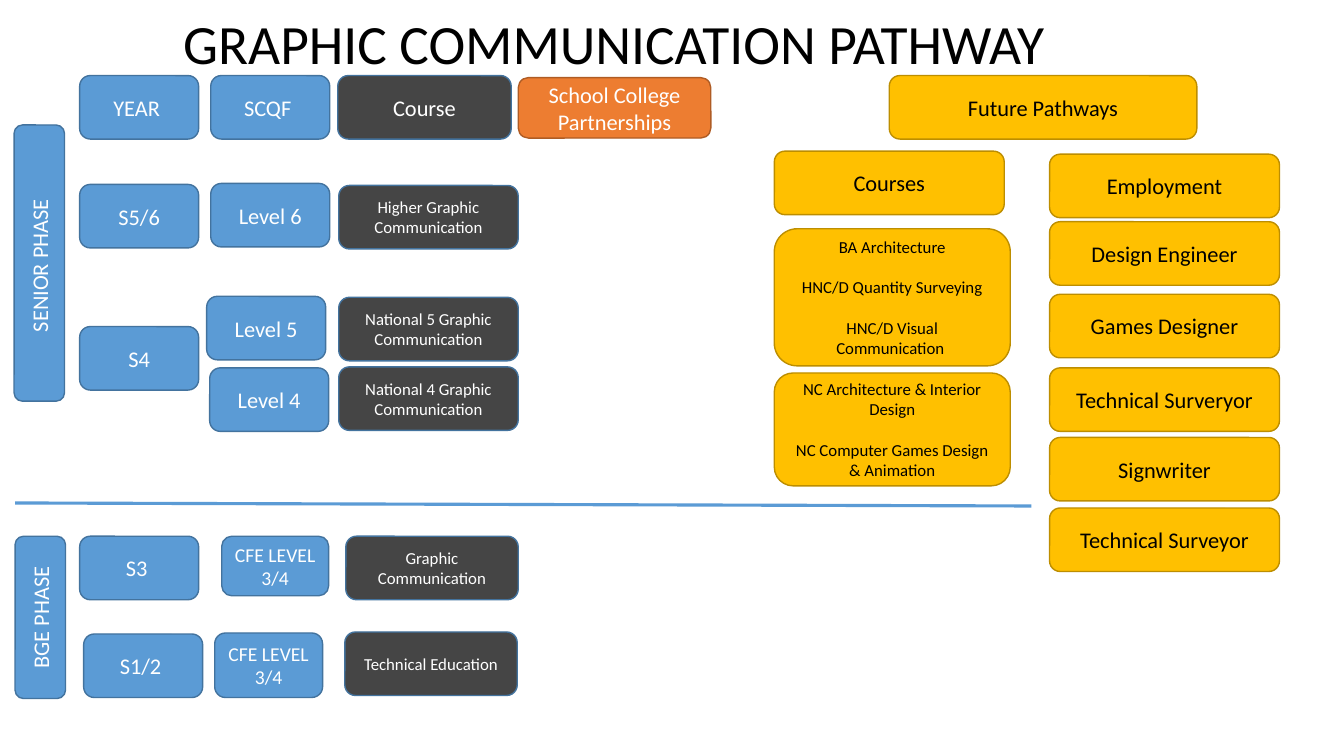
from lxml.etree import SubElement
from pptx import Presentation
from pptx.dml.color import RGBColor
from pptx.enum.shapes import MSO_CONNECTOR, MSO_SHAPE
from pptx.enum.text import MSO_ANCHOR, PP_ALIGN
from pptx.oxml.ns import qn
from pptx.util import Pt

PX = 9144
CARD_HEIGHT = 63
YEAR_WIDTH = 118
STYLES = {
    "blue": ("5B9BD5", "43739E", "FFFFFF"),
    "dark": ("454545", "43739E", "FFFFFF"),
    "orange": ("ED7D31", "AF5C24", "FFFFFF"),
    "gold": ("FFC000", "BD8E00", "000000"),
}


def color(value):
    """Turn a hex string into a colour."""
    return RGBColor.from_string(value)


def emu(*lengths):
    """Scale px lengths to EMU."""
    return [length * PX for length in lengths]


def write_text(shape, lines, size, font_color, **paragraph_format):
    """Write centred paragraphs, with one line of space between them."""
    frame = shape.text_frame
    frame.word_wrap = True
    frame.vertical_anchor = MSO_ANCHOR.MIDDLE
    for index, line in enumerate(lines):
        paragraph = frame.paragraphs[0] if index == 0 else frame.add_paragraph()
        paragraph.text = line
        values = {"alignment": PP_ALIGN.CENTER, **paragraph_format}
        if index:
            values["space_before"] = Pt(size * 1.22)
        for name, value in values.items():
            setattr(paragraph, name, value)
        for name, value in {"name": "Calibri", "size": Pt(size)}.items():
            setattr(paragraph.font, name, value)
        paragraph.font.color.rgb = color(font_color)


def add_card(slide, box, lines, style, size=16):
    """Add a rounded card with centred text."""
    fill, line, font_color = STYLES[style]
    shape = slide.shapes.add_shape(MSO_SHAPE.ROUNDED_RECTANGLE, *emu(*box))
    shape.shadow.inherit = False
    shape.fill.solid()
    shape.fill.fore_color.rgb = color(fill)
    shape.line.color.rgb = color(line)
    shape.line.width = Pt(1)
    write_text(shape, lines, size, font_color)
    return shape


def add_title(slide, box):
    """Add the slide title."""
    title = slide.shapes.add_textbox(*emu(*box))
    write_text(title, ["GRAPHIC COMMUNICATION PATHWAY"], 39.6, "000000", line_spacing=0.9)


def add_headings(slide, box):
    """Add the row of column headings."""
    left, top, width, height = box
    headings = [
        (0, 0, YEAR_WIDTH, height, "YEAR ", "blue"),
        (130, 0, YEAR_WIDTH, height, "SCQF ", "blue"),
        (256, 0, 172, height, "Course", "dark"),
        (435, 2, 191, height - 3, "School College Partnerships", "orange"),
        (width - 305, 0, 305, height, "Future Pathways", "gold"),
    ]
    for x, y, card_width, card_height, text, style in headings:
        add_card(slide, (left + x, top + y, card_width, card_height), [text], style)


def add_phase(slide, box, name, cards):
    """Add a vertical phase band and the cards beside it."""
    left, top = box[:2]
    band = add_card(slide, box, [name], "blue")
    band.element.txBody.bodyPr.set("vert", "vert270")
    for x, y, width, height, text, style, size in cards:
        add_card(slide, (left + x, top + y, width, height), [text], style, size)


def add_divider(slide, box):
    """Add the line between the two phases."""
    left, top, width, height = box
    line = slide.shapes.add_connector(
        MSO_CONNECTOR.STRAIGHT, *emu(left, top, left + width, top + height))
    line.line.color.rgb = color("5B9BD5")
    line.line.width = Pt(2.25)
    SubElement(line.element.spPr, qn("a:effectLst"))


def add_courses(slide, box):
    """Add the further courses under their heading."""
    left, top, width, height = box
    degrees = ["BA Architecture", "HNC/D Quantity Surveying", "HNC/D Visual Communication "]
    certificates = ["NC Architecture & Interior Design",
                    "NC Computer Games Design & Animation"]
    add_card(slide, (left, top, width - 6, CARD_HEIGHT), ["Courses"], "gold")
    add_card(slide, (left, top + 77, width, 136), degrees, "gold", 12)
    add_card(slide, (left, top + 220, width, height - 220), certificates, "gold", 12)


def add_employment(slide, box):
    """Add the jobs under their heading."""
    left, top, width, height = box
    jobs = [
        (0, "Employment"),
        (67, "Design Engineer"),
        (139, "Games Designer"),
        (212, "Technical Surveryor"),
        (281, "Signwriter"),
        (height - CARD_HEIGHT, "Technical Surveyor"),
    ]
    for y, job in jobs:
        add_card(slide, (left, top + y, width, CARD_HEIGHT), [job], "gold")


def main():
    """Build and save the slide."""
    presentation = Presentation()
    presentation.slide_width, presentation.slide_height = emu(1333, 750)
    slide = presentation.slides.add_slide(presentation.slide_layouts[6])
    senior_cards = [
        (65, 59, YEAR_WIDTH, CARD_HEIGHT, "S5/6", "blue", 16),
        (65, 200, YEAR_WIDTH, CARD_HEIGHT, "S4", "blue", 16),
        (195, 58, YEAR_WIDTH, CARD_HEIGHT, "Level 6", "blue", 16),
        (191, 170, YEAR_WIDTH, CARD_HEIGHT, "Level 5", "blue", 16),
        (194, 241, YEAR_WIDTH, CARD_HEIGHT, "Level 4", "blue", 16),
        (322, 60, 178, CARD_HEIGHT, "Higher Graphic Communication", "dark", 12),
        (322, 171, 178, CARD_HEIGHT, "National 5 Graphic Communication", "dark", 12),
        (322, 240, 178, CARD_HEIGHT, "National 4 Graphic Communication", "dark", 12),
    ]
    general_cards = [
        (64, 0, YEAR_WIDTH, CARD_HEIGHT, "S3 ", "blue", 16),
        (68, 97, YEAR_WIDTH, CARD_HEIGHT, "S1/2 ", "blue", 16),
        (205, 0, 106, 59, "CFE LEVEL 3/4", "blue", 14),
        (198, 96, 107, 64, "CFE LEVEL 3/4", "blue", 14),
        (328, 0, 171, CARD_HEIGHT, "Graphic Communication", "dark", 12),
        (327, 95, 171, CARD_HEIGHT, "Technical Education", "dark", 12),
    ]
    add_title(slide, (164, 14, 890, 64))
    add_headings(slide, (79, 75, 1108, CARD_HEIGHT))
    add_phase(slide, (14, 124, 50, 274), "SENIOR PHASE ", senior_cards)
    add_divider(slide, (15, 499, 1008, 3))
    add_phase(slide, (15, 532, 50, 161), "BGE PHASE", general_cards)
    add_courses(slide, (768, 150, 234, 332))
    add_employment(slide, (1041, 153, 228, 414))
    presentation.save("out.pptx")


if __name__ == "__main__":
    main()
